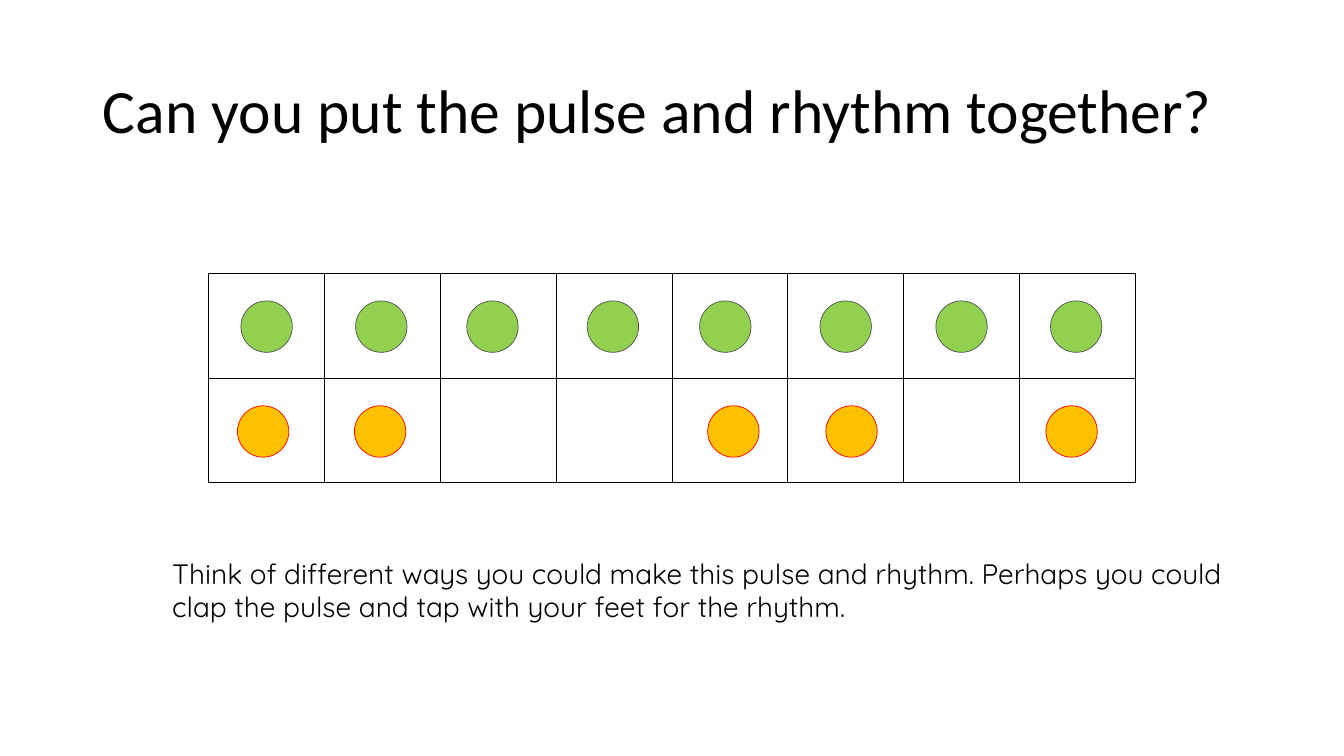
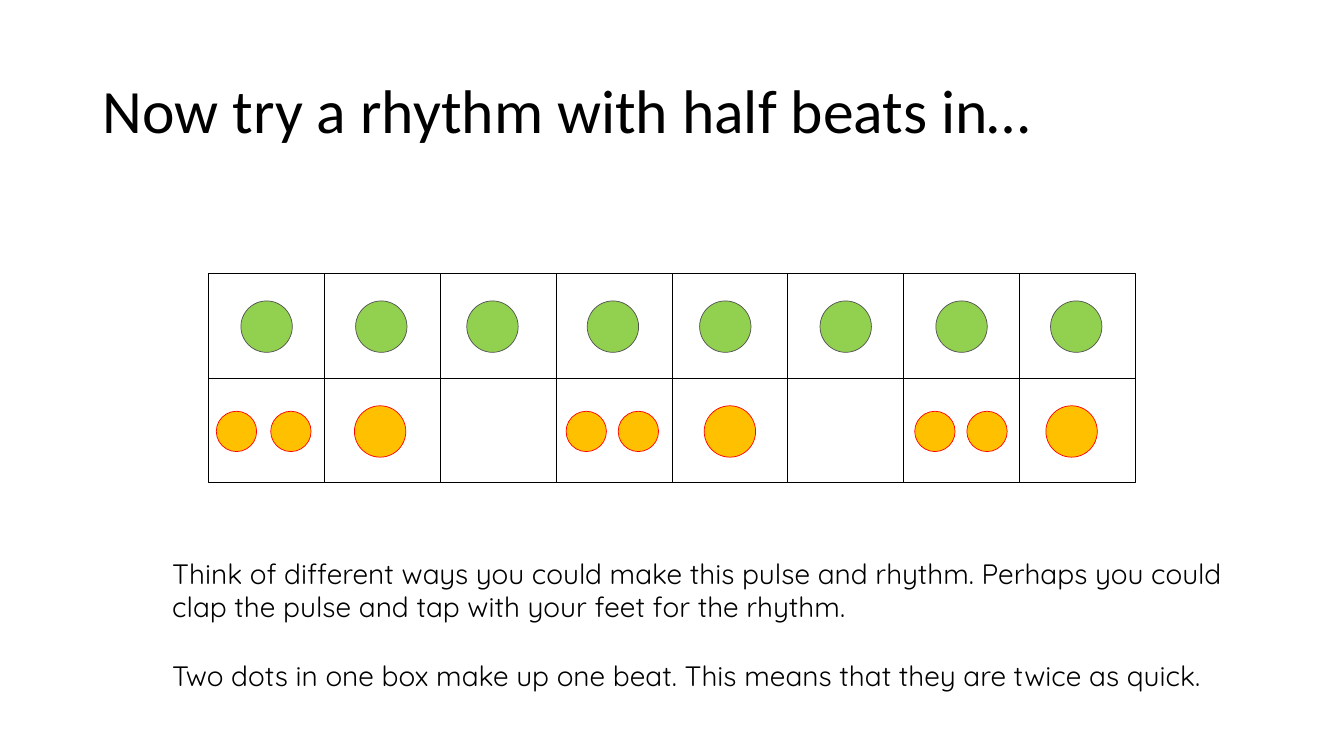
from pptx import Presentation
from pptx.dml.color import RGBColor as RGB
from pptx.enum.shapes import MSO_SHAPE as SHAPE
from pptx.enum.text import MSO_ANCHOR as ANCHOR, MSO_AUTO_SIZE as AUTO, PP_ALIGN as ALIGN
from pptx.util import Inches, Pt

COLORS = {"text": "000000", "grid": "000000", "pulse": "92D050",
          "pulse_line": "525252", "rhythm": "FFC000", "rhythm_line": "FF0000"}
COLS, ROWS = 8, 2
GRID_X, GRID_Y, GRID_W, GRID_H = 2.07, 2.71, 9.19, 2.08
COL_W, ROW_H = GRID_W / COLS, GRID_H / ROWS
BEAT, HALF_BEAT = 0.51, 0.4  # dot diameters in inches
DOT_Y = 0.51  # dot centre as a share of the row

# Dot centres are counted in columns from the left edge of the grid
PULSE = [0.5, 1.49, 2.45, 3.49, 4.46, 5.5, 6.5, 7.49]
HINT = ("Think of different ways you could make this pulse and rhythm. "
        "Perhaps you could clap the pulse and tap with your feet for the rhythm.")
SLIDES = [
    {"title": "Can you put the pulse and rhythm together?",
     "beats": [0.47, 1.48, 4.53, 5.55, 7.45], "half_beats": [],
     "notes": [HINT], "notes_h": 0.77},
    {"title": "Now try a rhythm with half beats in…",
     "beats": [1.48, 4.5, 7.45],
     "half_beats": [0.24, 0.71, 3.26, 3.71, 6.27, 6.72],
     "notes": [HINT, "Two dots in one box make up one beat. "
                     "This means that they are twice as quick."],
     "notes_h": 1.78},
]


def add_outlined(s, kind, x, y, w, h, line, fill=None):
    sp = s.shapes.add_shape(kind, Inches(x), Inches(y), Inches(w), Inches(h))
    sp.shadow.inherit = False
    if fill:
        sp.fill.solid()
        sp.fill.fore_color.rgb = RGB.from_string(COLORS[fill])
    else:
        sp.fill.background()
    sp.line.color.rgb = RGB.from_string(COLORS[line])
    sp.line.width = Pt(0.5)


def style_paragraph(p, font, size):
    p.alignment = ALIGN.LEFT
    for r in p.runs:
        r.font.name = font
        r.font.size = Pt(size)
        r.font.color.rgb = RGB.from_string(COLORS["text"])


prs = Presentation()
prs.slide_width, prs.slide_height = Inches(13.33), Inches(7.5)
title_only = prs.slide_layouts.get_by_name("Title Only")

for content in SLIDES:
    s = prs.slides.add_slide(title_only)

    title = s.shapes.title
    title.left, title.top = Inches(0.92), Inches(0.4)
    title.width, title.height = Inches(11.5), Inches(1.45)
    tf = title.text_frame
    tf.text = content["title"]
    tf.auto_size = AUTO.NONE
    tf.vertical_anchor = ANCHOR.MIDDLE
    tf.paragraphs[0].line_spacing = 0.9
    style_paragraph(tf.paragraphs[0], "Calibri", 44)

    for row in range(ROWS):
        for col in range(COLS):
            add_outlined(s, SHAPE.RECTANGLE, GRID_X + col * COL_W,
                         GRID_Y + row * ROW_H, COL_W, ROW_H, "grid")

    for row, centres, size, color in [(0, PULSE, BEAT, "pulse"),
                                      (1, content["beats"], BEAT, "rhythm"),
                                      (1, content["half_beats"], HALF_BEAT, "rhythm")]:
        for centre in centres:
            add_outlined(s, SHAPE.OVAL, GRID_X + centre * COL_W - size / 2,
                         GRID_Y + (row + DOT_Y) * ROW_H - size / 2,
                         size, size, color + "_line", color)

    notes = s.shapes.add_textbox(Inches(1.61), Inches(5.47),
                                 Inches(10.7), Inches(content["notes_h"]))
    tf = notes.text_frame
    tf.word_wrap = True
    for i, text in enumerate(content["notes"]):
        p = tf.add_paragraph() if i else tf.paragraphs[0]
        p.text = text
        p.space_before = Pt(25 if i else 0)
        style_paragraph(p, "Quicksand", 20)

prs.save("out.pptx")
